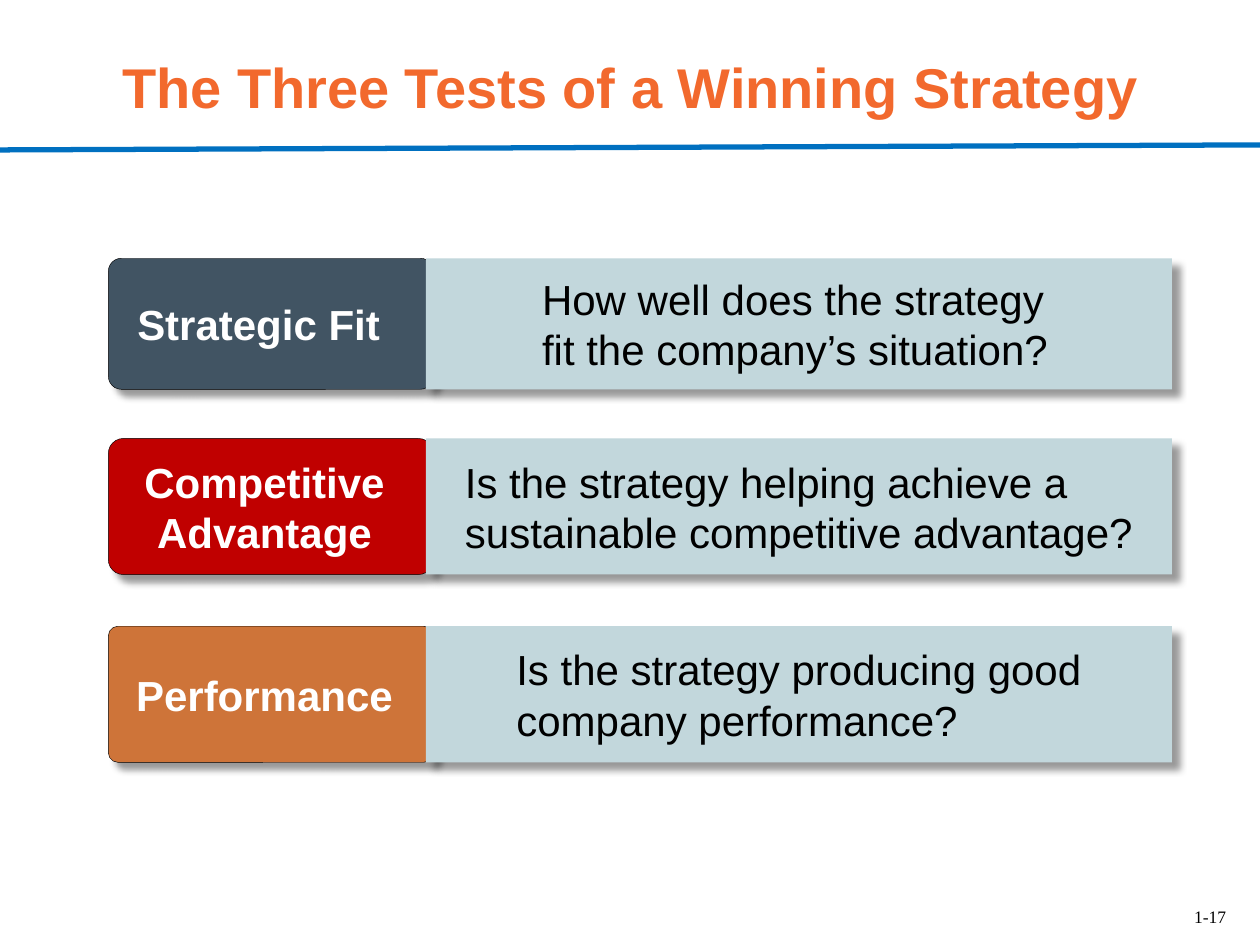
from dataclasses import dataclass

from lxml.etree import SubElement
from pptx import Presentation
from pptx.dml.color import RGBColor
from pptx.enum.shapes import MSO_CONNECTOR, MSO_SHAPE
from pptx.enum.text import MSO_ANCHOR, PP_ALIGN
from pptx.oxml.ns import qn
from pptx.shapes.autoshape import Shape
from pptx.slide import Slide
from pptx.util import Emu, Inches, Pt

COLUMNS, ROWS = 100, 75
SLIDE_WIDTH, SLIDE_HEIGHT = Inches(10), Inches(7.5)


@dataclass(frozen=True)
class Theme:
    font: str = "Arial"
    number_font: str = "Times New Roman"
    title_size: int = 32
    body_size: int = 24
    number_size: int = 10
    title: str = "F2692D"
    rule: str = "0070C0"
    panel: str = "C2D7DC"
    dark: str = "000000"
    light: str = "FFFFFF"
    fit: str = "415453"[:5] + "63"[1:]
    advantage: str = "C00000"
    performance: str = "CE7439"


THEME = Theme(fit="415463")


@dataclass(frozen=True)
class Area:
    column: float
    row: float
    width: float
    height: float

    def lengths(self) -> tuple[Emu, Emu, Emu, Emu]:
        return (across(self.column), down(self.row),
                across(self.width), down(self.height))


@dataclass(frozen=True)
class Test:
    name: str
    question: str
    color: str
    row: float
    height: float
    rounding: float


TESTS = [
    Test("Strategic Fit ", "How well does the strategy \vfit the company’s situation?",
         THEME.fit, 20.5, 10.4, 0.1),
    Test("Competitive Advantage",
         "Is the strategy helping achieve a sustainable competitive advantage?",
         THEME.advantage, 34.8, 10.8, 0.11),
    Test("Performance", "Is the strategy producing good company performance?",
         THEME.performance, 49.7, 10.8, 0.07),
]


def across(columns: float) -> Emu:
    return Emu(round(SLIDE_WIDTH * columns / COLUMNS))


def down(rows: float) -> Emu:
    return Emu(round(SLIDE_HEIGHT * rows / ROWS))


def write_text(shape: Shape, text: str, *, size: int = THEME.body_size,
               color: str = THEME.dark, font: str = THEME.font, bold: bool = False,
               align: PP_ALIGN = PP_ALIGN.LEFT,
               anchor: MSO_ANCHOR = MSO_ANCHOR.MIDDLE) -> None:
    frame = shape.text_frame
    frame.word_wrap = True
    frame.vertical_anchor = anchor
    frame.text = text
    paragraph = frame.paragraphs[0]
    paragraph.alignment = align
    paragraph.font.name = font
    paragraph.font.size = Pt(size)
    paragraph.font.bold = bold
    paragraph.font.color.rgb = RGBColor.from_string(color)


def add_shadow(shape: Shape) -> None:
    effects = SubElement(shape.element.spPr, qn("a:effectLst"))
    shadow = SubElement(effects, qn("a:outerShdw"), blurRad=str(Pt(4)), dist=str(Pt(6)),
                        dir="2700000", algn="tl", rotWithShape="0")
    color = SubElement(shadow, qn("a:srgbClr"), val=THEME.dark)
    SubElement(color, qn("a:alpha"), val="40000")


def add_block(slide: Slide, kind: MSO_SHAPE, area: Area, fill: str,
              outlined: bool = False) -> Shape:
    shape = slide.shapes.add_shape(kind, *area.lengths())
    shape.fill.solid()
    shape.fill.fore_color.rgb = RGBColor.from_string(fill)
    if outlined:
        shape.line.color.rgb = RGBColor.from_string(THEME.dark)
        shape.line.width = Pt(0.25)
    else:
        shape.line.fill.background()
    add_shadow(shape)
    return shape


def add_name(slide: Slide, test: Test) -> None:
    area = Area(8.6, test.row, 25.8, test.height)
    shape = add_block(slide, MSO_SHAPE.ROUNDED_RECTANGLE, area, test.color, outlined=True)
    shape.adjustments[0] = test.rounding
    shape.text_frame.margin_right = across(2)
    write_text(shape, test.name, color=THEME.light, bold=True, align=PP_ALIGN.CENTER)


def add_question(slide: Slide, test: Test) -> None:
    area = Area(33.8, test.row, 59.2, test.height)
    shape = add_block(slide, MSO_SHAPE.RECTANGLE, area, THEME.panel)
    write_text(shape, test.question)
    shape.element.txBody.bodyPr.set("anchorCtr", "1")


def add_rule(slide: Slide) -> None:
    rule = slide.shapes.add_connector(MSO_CONNECTOR.STRAIGHT, across(0), down(11.9),
                                      across(COLUMNS), down(11.5))
    rule.line.color.rgb = RGBColor.from_string(THEME.rule)
    rule.line.width = Pt(3)
    SubElement(rule.element.spPr, qn("a:effectLst"))


def main() -> None:
    presentation = Presentation()
    presentation.slide_width, presentation.slide_height = SLIDE_WIDTH, SLIDE_HEIGHT
    slide = presentation.slides.add_slide(presentation.slide_layouts[6])

    add_rule(slide)
    number = slide.shapes.add_textbox(*Area(74.3, 70.3, 24, 3.8).lengths())
    write_text(number, "1-17", size=THEME.number_size, font=THEME.number_font,
               align=PP_ALIGN.RIGHT, anchor=MSO_ANCHOR.BOTTOM)
    title = slide.shapes.add_textbox(*Area(5.9, 3.7, 88.3, 6.3).lengths())
    write_text(title, "The Three Tests of a Winning Strategy", size=THEME.title_size,
               color=THEME.title, bold=True, align=PP_ALIGN.CENTER)

    for test in TESTS:
        add_name(slide, test)
        add_question(slide, test)

    presentation.save("out.pptx")


if __name__ == "__main__":
    main()
